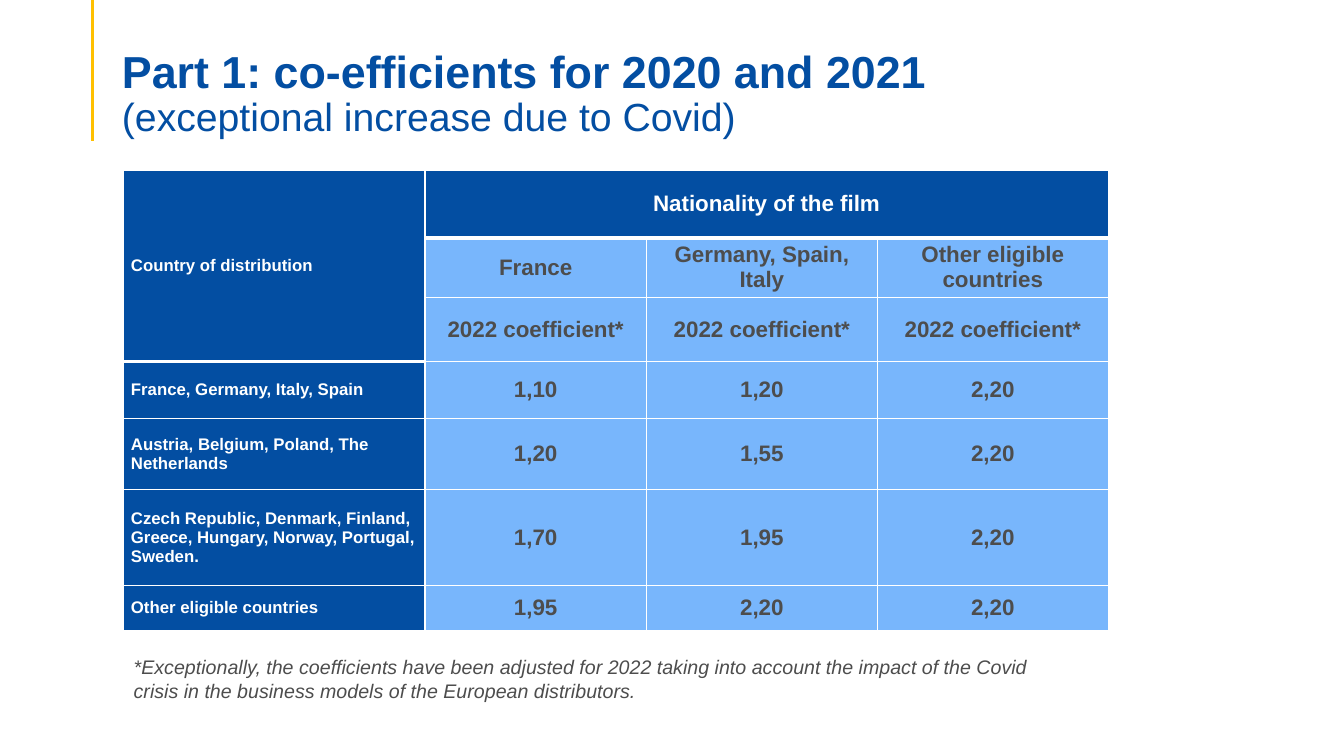
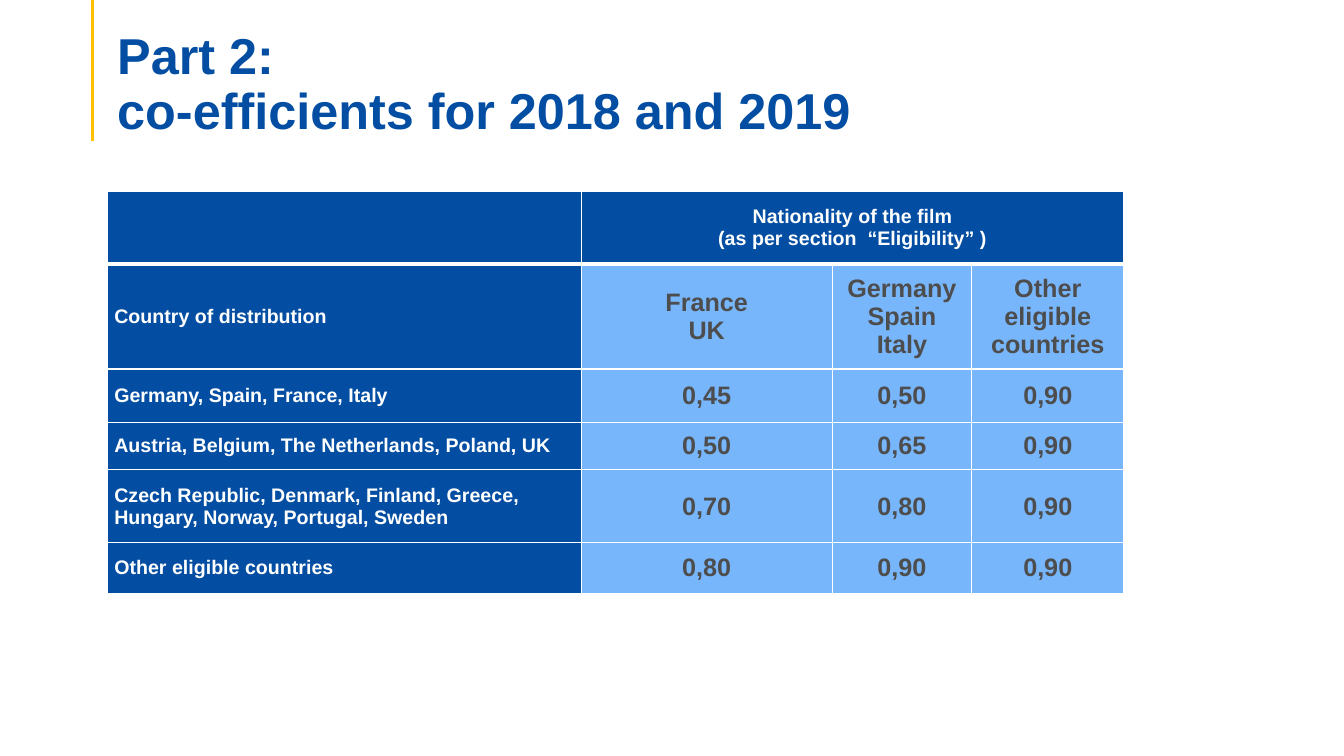
from dataclasses import dataclass

from lxml import etree
from pptx import Presentation
from pptx import util as u
from pptx.dml.color import RGBColor
from pptx.enum import shapes, text
from pptx.oxml import ns

FONT = "Arial"
COLOURS = {
    "blue": "034EA2",
    "light_blue": "78B6FC",
    "grey": "4D4D4D",
    "white": "FFFFFF",
    "gold": "FFC000",
}
TITLE_ONLY = 5
THIN, THICK = 1, 3


@dataclass(frozen=True)
class Box:
    """Position and size in centimetres."""
    left: float
    top: float
    width: float
    height: float

    def lengths(self) -> tuple:
        return tuple(u.Cm(v) for v in (self.left, self.top, self.width, self.height))


@dataclass(frozen=True)
class TitleLine:
    wording: str
    size: int
    bold: bool = True


@dataclass(frozen=True)
class CoefficientTable:
    left: float
    top: float
    columns: list[float]
    heights: list[float]
    rows: list[list[str]]
    merges: list[tuple]         # ((row, column), (row, column)) corners
    header_depths: list[int]    # header rows above the thick edge, by column
    label_size: int
    heading_size: int
    value_size: int
    value_inset: float


@dataclass(frozen=True)
class CoefficientSlide:
    title_box: Box
    title: list[TitleLine]
    table: CoefficientTable
    footnote: str = ""


def rgb(name: str) -> RGBColor:
    return RGBColor.from_string(COLOURS[name])


def add_run(paragraph, wording: str, size: int, colour: str,
            bold: bool = False, italic: bool = False) -> None:
    run = paragraph.add_run()
    run.text = wording
    font = run.font
    font.name, font.size = FONT, u.Pt(size)
    font.bold, font.italic = bold, italic
    font.color.rgb = rgb(colour)


def add_title_rule(slide) -> None:
    x = u.Cm(2.34)
    rule = slide.shapes.add_connector(shapes.MSO_CONNECTOR.STRAIGHT, x, 0, x, u.Cm(3.56))
    rule.line.color.rgb = rgb("gold")
    rule.line.width = u.Pt(2.25)
    etree.SubElement(rule._element.spPr, ns.qn("a:effectLst"))


def write_title(slide, box: Box, lines: list[TitleLine]) -> None:
    title = slide.shapes.title
    title.left, title.top, title.width, title.height = box.lengths()
    frame = title.text_frame
    frame.auto_size = text.MSO_AUTO_SIZE.NONE
    frame.word_wrap = True
    frame.vertical_anchor = text.MSO_ANCHOR.BOTTOM
    frame.margin_bottom = 0
    paragraph = frame.paragraphs[0]
    paragraph.alignment = text.PP_ALIGN.LEFT
    paragraph.line_spacing = 0.9
    for number, line in enumerate(lines):
        if number:
            paragraph.add_line_break()
        add_run(paragraph, line.wording, line.size, "blue", line.bold)


def add_cell_edge(cell, side: str, points: int) -> None:
    edge = etree.SubElement(cell._tc.get_or_add_tcPr(), ns.qn(f"a:ln{side}"),
                            w=str(u.Pt(points)))
    fill = etree.SubElement(edge, ns.qn("a:solidFill"))
    etree.SubElement(fill, ns.qn("a:srgbClr"), val=COLOURS["white"])


def format_cell(cell, row: int, column: int, data: CoefficientTable) -> None:
    is_label, is_heading = column == 0, row == 0
    dark = is_label or is_heading
    depth = data.header_depths[column]
    widths = {"L": THIN, "R": THIN,
              "T": THICK if 0 < row <= depth else THIN,
              "B": THICK if row < depth else THIN}
    for side, points in widths.items():
        add_cell_edge(cell, side, points)
    cell.fill.solid()
    cell.fill.fore_color.rgb = rgb("blue" if dark else "light_blue")
    cell.vertical_anchor = text.MSO_ANCHOR.MIDDLE
    cell.margin_top = cell.margin_bottom = 0
    cell.margin_left = u.Cm(0.18 if is_label else data.value_inset)
    cell.margin_right = u.Cm(data.value_inset)

    wording = data.rows[row][column]
    if not wording:
        return
    size = (data.label_size if is_label
            else data.heading_size if is_heading else data.value_size)
    frame = cell.text_frame
    for number, line in enumerate(wording.split("\n")):
        paragraph = frame.add_paragraph() if number else frame.paragraphs[0]
        paragraph.alignment = text.PP_ALIGN.LEFT if is_label else text.PP_ALIGN.CENTER
        add_run(paragraph, line, size, "white" if dark else "grey", bold=True)


def add_coefficient_table(slide, data: CoefficientTable) -> None:
    box = Box(data.left, data.top, sum(data.columns), sum(data.heights))
    table = slide.shapes.add_table(len(data.heights), len(data.columns), *box.lengths()).table
    table.first_row = table.horz_banding = False
    for column, width in zip(table.columns, data.columns):
        column.width = u.Cm(width)
    for row, height in zip(table.rows, data.heights):
        row.height = u.Cm(height)
    for first, last in data.merges:
        table.cell(*first).merge(table.cell(*last))
    for row in range(len(data.heights)):
        for column in range(len(data.columns)):
            format_cell(table.cell(row, column), row, column, data)


def add_footnote(slide, wording: str) -> None:
    footnote = slide.shapes.add_textbox(*Box(3.12, 16.38, 23.65, 1.45).lengths())
    frame = footnote.text_frame
    frame.word_wrap = True
    add_run(frame.paragraphs[0], wording, 14, "grey", italic=True)


SLIDES = [
    CoefficientSlide(
        title_box=Box(2.82, 0.71, 29.9, 2.82),
        title=[TitleLine("Part 1: co-efficients for 2020 and 2021", 32),
               TitleLine("(exceptional increase due to Covid)", 28, bold=False)],
        table=CoefficientTable(
            left=3.12, top=4.3,
            columns=[7.59, 5.58, 5.82, 5.82],
            heights=[1.69, 1.5, 1.62, 1.44, 1.79, 2.42, 1.12],
            rows=[
                ["Country of distribution", "Nationality of the film", "", ""],
                ["", "France", "Germany, Spain,\nItaly", "Other eligible countries"],
                [""] + ["2022 coefficient*"] * 3,
                ["France, Germany, Italy, Spain", "1,10", "1,20", "2,20"],
                ["Austria, Belgium, Poland, The Netherlands", "1,20", "1,55", "2,20"],
                ["Czech Republic, Denmark, Finland, Greece, Hungary, Norway, "
                 "Portugal, Sweden.", "1,70", "1,95", "2,20"],
                ["Other eligible countries", "1,95", "2,20", "2,20"],
            ],
            merges=[((0, 0), (2, 0)), ((0, 1), (0, 3))],
            header_depths=[3, 1, 1, 1],
            label_size=12, heading_size=16, value_size=16, value_inset=0.18),
        footnote="*Exceptionally, the coefficients have been adjusted for 2022 taking into "
                 "account the impact of the Covid crisis in the business models of the "
                 "European distributors."),
    CoefficientSlide(
        title_box=Box(2.7, 1.35, 29.2, 2.18),
        title=[TitleLine("Part 2:", 36),
               TitleLine("co-efficients for 2018 and 2019", 36)],
        table=CoefficientTable(
            left=2.7, top=4.83,
            columns=[11.95, 6.32, 3.52, 3.83],
            heights=[1.83, 2.64, 1.34, 1.2, 1.84, 1.27],
            rows=[
                ["", "Nationality of the film\n(as per section  “Eligibility” )", "", ""],
                ["Country of distribution", "France\nUK", "Germany Spain\nItaly",
                 "Other eligible countries"],
                ["Germany, Spain, France, Italy", "0,45", "0,50", "0,90"],
                ["Austria, Belgium, The Netherlands, Poland, UK", "0,50", "0,65", "0,90"],
                ["Czech Republic, Denmark, Finland, Greece, Hungary, Norway, "
                 "Portugal, Sweden", "0,70", "0,80", "0,90"],
                ["Other eligible countries", "0,80", "0,90", "0,90"],
            ],
            merges=[((0, 1), (0, 3))],
            header_depths=[1, 1, 1, 1],
            label_size=14, heading_size=14, value_size=18, value_inset=0)),
]


def main() -> None:
    deck = Presentation()
    deck.slide_width, deck.slide_height = u.Cm(33.87), u.Cm(19.05)
    for content in SLIDES:
        slide = deck.slides.add_slide(deck.slide_layouts[TITLE_ONLY])
        add_title_rule(slide)
        write_title(slide, content.title_box, content.title)
        add_coefficient_table(slide, content.table)
        if content.footnote:
            add_footnote(slide, content.footnote)
    deck.save("out.pptx")


if __name__ == "__main__":
    main()
